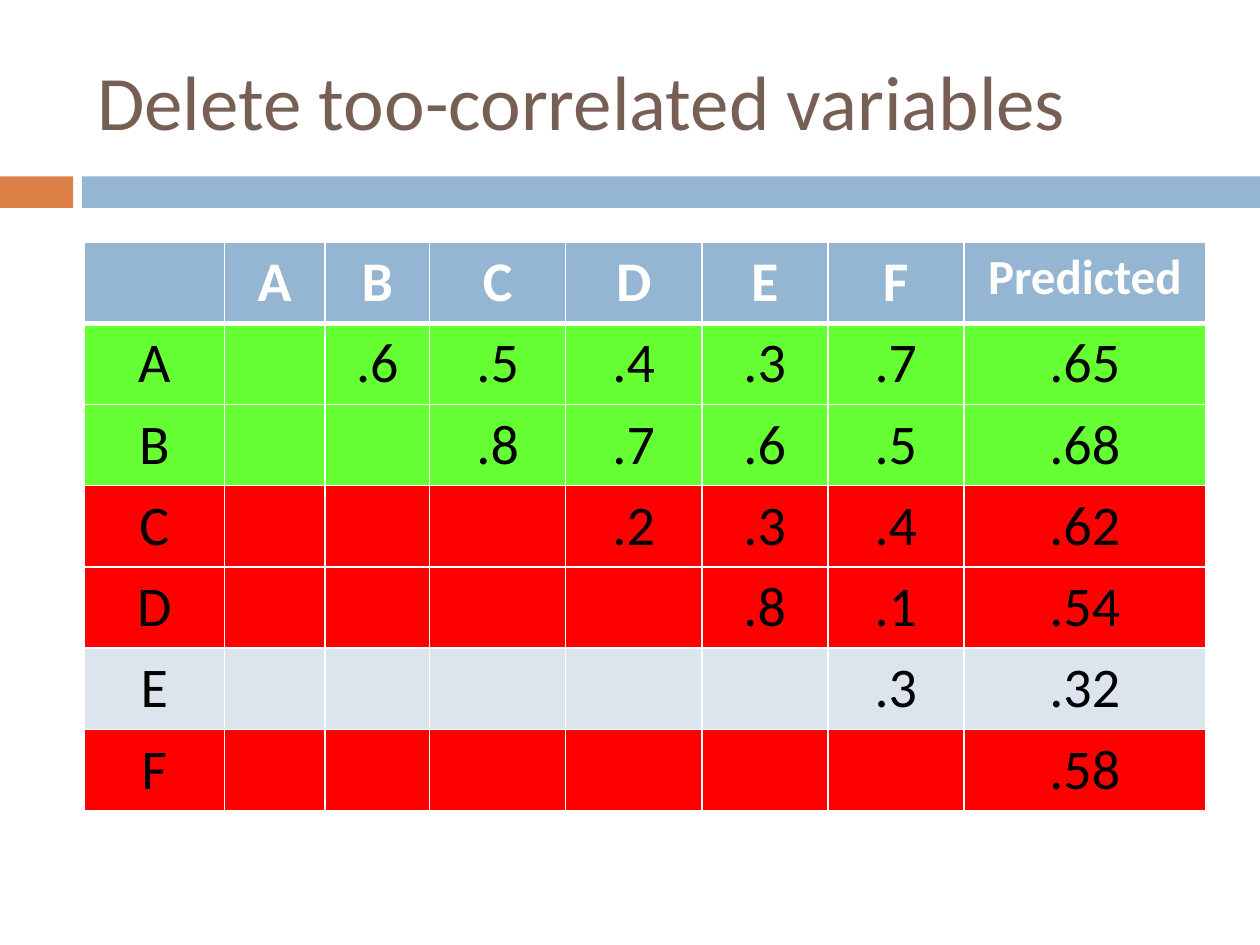
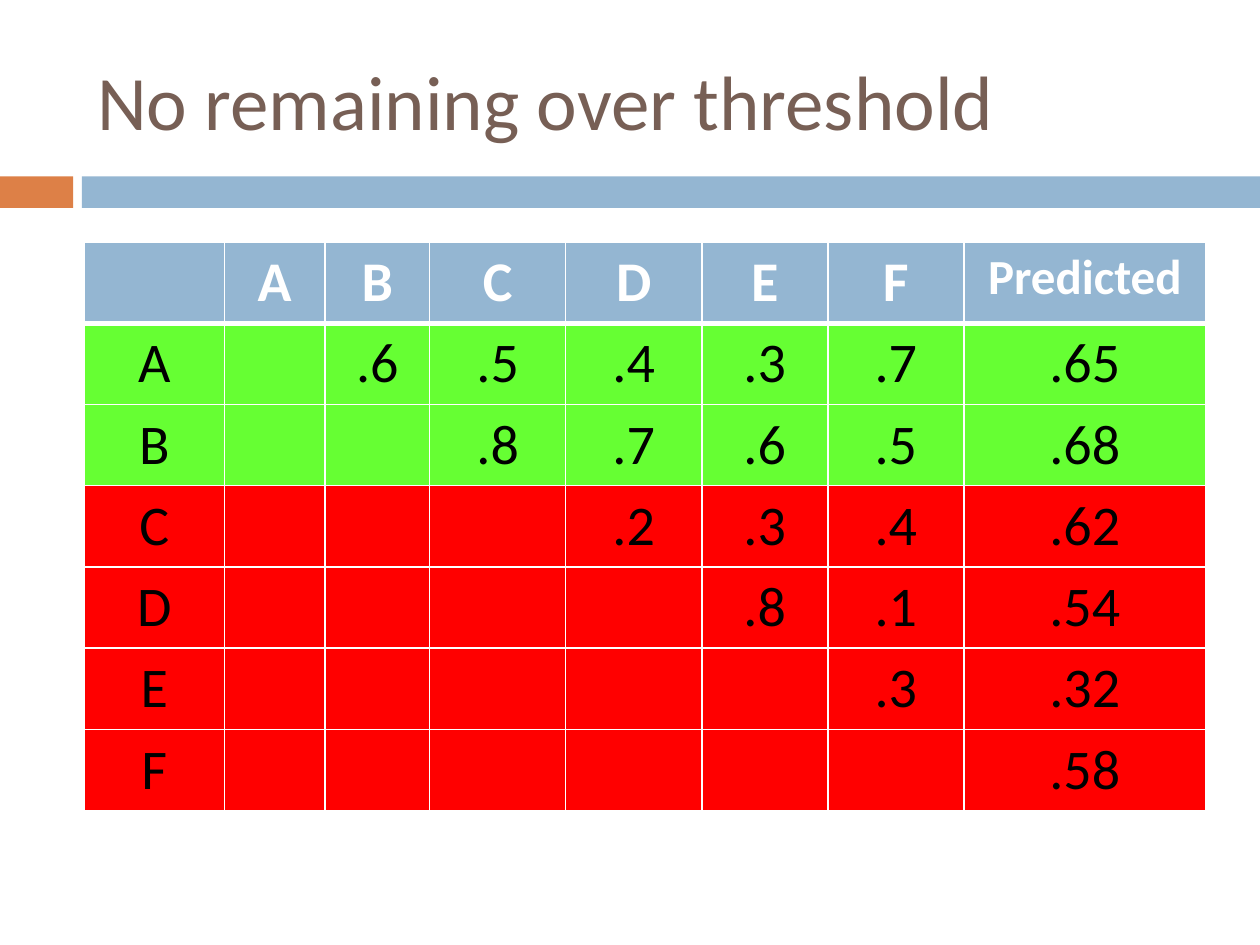
from lxml.etree import SubElement
from pptx import Presentation
from pptx.dml.color import RGBColor
from pptx.enum.shapes import MSO_SHAPE
from pptx.enum.text import MSO_ANCHOR, PP_ALIGN
from pptx.oxml.ns import qn
from pptx.util import Inches, Pt

# Colours and font
FONT = "Calibri"
WHITE = RGBColor(0xFF, 0xFF, 0xFF)
BLACK = RGBColor(0x00, 0x00, 0x00)
BROWN = RGBColor(0x77, 0x5F, 0x55)
ORANGE = RGBColor(0xDD, 0x80, 0x47)
BLUE = RGBColor(0x94, 0xB6, 0xD2)
PALE_BLUE = RGBColor(0xDC, 0xE5, 0xEE)
GREEN = RGBColor(0x66, 0xFF, 0x33)
RED = RGBColor(0xFF, 0x00, 0x00)

# Content: each variable has its correlations with the later ones, then its prediction
VARIABLES = "ABCDEF"
CORRELATIONS = [
    [".6", ".5", ".4", ".3", ".7", ".65"],
    [".8", ".7", ".6", ".5", ".68"],
    [".2", ".3", ".4", ".62"],
    [".8", ".1", ".54"],
    [".3", ".32"],
    [".58"],
]
KEPT = "AB"
SLIDES = [
    ("Delete too-correlated variables", "CDF"),
    ("No remaining over threshold", "CDEF"),
]

# Layout in inches
BANDS = [(0, 0.58, ORANGE), (0.65, 9.35, BLUE)]
BAND_TOP, BAND_HEIGHT = 1.4, 0.25
CONTENT_LEFT, CONTENT_WIDTH = 0.67, 8.92
TITLE_TOP, TITLE_HEIGHT = 0.25, 1.08
TABLE_TOP, ROW_HEIGHT = 1.92, 0.645
COLUMN_WIDTHS = [1.11, 0.8, 0.83, 1.08, 1.08, 1, 1.08, 1.92]


def format_font(paragraph, size, color, bold=False):
    for run in paragraph.runs:
        run.font.name = FONT
        run.font.size = Pt(size)
        run.font.bold = bold
        run.font.color.rgb = color


def add_bands(slide):
    for left, width, color in BANDS:
        band = slide.shapes.add_shape(
            MSO_SHAPE.RECTANGLE, Inches(left), Inches(BAND_TOP),
            Inches(width), Inches(BAND_HEIGHT))
        band.shadow.inherit = False
        band.fill.solid()
        band.fill.fore_color.rgb = color
        band.line.fill.background()


def set_title(slide, text):
    title = slide.shapes.title
    title.left, title.top = Inches(CONTENT_LEFT), Inches(TITLE_TOP)
    title.width, title.height = Inches(CONTENT_WIDTH), Inches(TITLE_HEIGHT)
    title.text_frame.text = text
    title.text_frame.vertical_anchor = MSO_ANCHOR.MIDDLE
    paragraph = title.text_frame.paragraphs[0]
    paragraph.alignment = PP_ALIGN.LEFT
    format_font(paragraph, 44, BROWN)


def set_borders(cell, top, bottom):
    properties = cell._tc.get_or_add_tcPr()
    for side, width in (("L", 1), ("R", 1), ("T", top), ("B", bottom)):
        line = SubElement(properties, qn(f"a:ln{side}"), w=str(Pt(width)))
        fill = SubElement(line, qn("a:solidFill"))
        SubElement(fill, qn("a:srgbClr"), val=str(WHITE))


def row_color(variable, deleted):
    if variable in KEPT:
        return GREEN
    return RED if variable in deleted else PALE_BLUE


def add_correlation_table(slide, deleted):
    # Pad each row on the left to form the upper triangle
    rows = [["", *VARIABLES, "Predicted"]]
    for index, (variable, values) in enumerate(zip(VARIABLES, CORRELATIONS)):
        rows.append([variable] + [""] * (index + 1) + values)
    fills = [BLUE] + [row_color(variable, deleted) for variable in VARIABLES]

    table = slide.shapes.add_table(
        len(rows), len(COLUMN_WIDTHS), Inches(CONTENT_LEFT), Inches(TABLE_TOP),
        Inches(CONTENT_WIDTH), Inches(ROW_HEIGHT * len(rows))).table
    table.horz_banding = False
    for column, width in zip(table.columns, COLUMN_WIDTHS):
        column.width = Inches(width)

    for row_index, (values, fill) in enumerate(zip(rows, fills)):
        table.rows[row_index].height = Inches(ROW_HEIGHT)
        header = row_index == 0
        for column_index, text in enumerate(values):
            cell = table.cell(row_index, column_index)
            set_borders(cell, top=3 if row_index == 1 else 1, bottom=3 if header else 1)
            cell.fill.solid()
            cell.fill.fore_color.rgb = fill
            cell.text_frame.text = text
            paragraph = cell.text_frame.paragraphs[0]
            paragraph.alignment = PP_ALIGN.CENTER
            size = 28 if text == "Predicted" else 32
            format_font(paragraph, size, WHITE if header else BLACK, bold=header)


def main():
    presentation = Presentation()
    presentation.slide_width, presentation.slide_height = Inches(10), Inches(7.5)
    title_only = presentation.slide_layouts[5]
    for title, deleted in SLIDES:
        slide = presentation.slides.add_slide(title_only)
        add_bands(slide)
        set_title(slide, title)
        add_correlation_table(slide, deleted)
    presentation.save("out.pptx")


if __name__ == "__main__":
    main()
